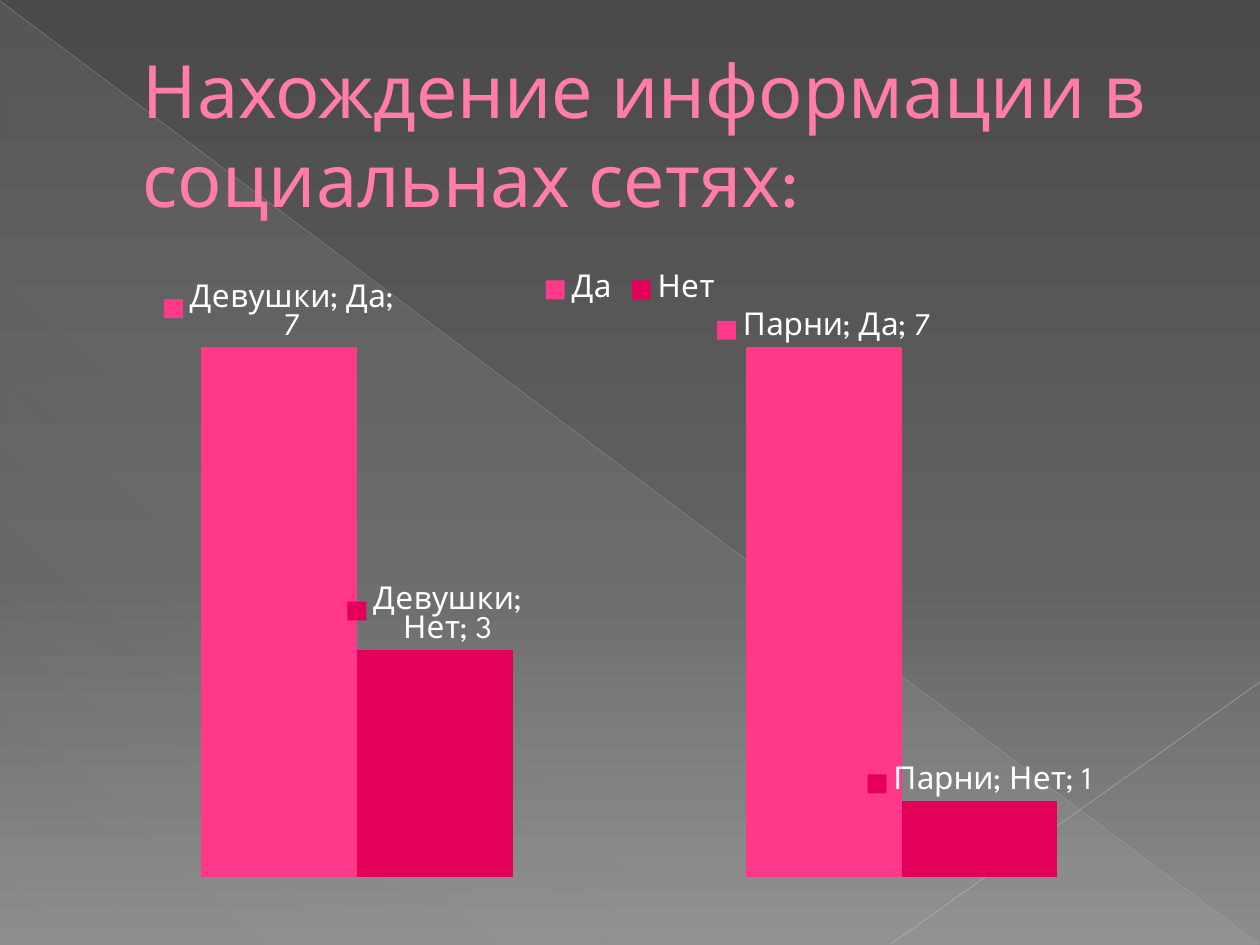
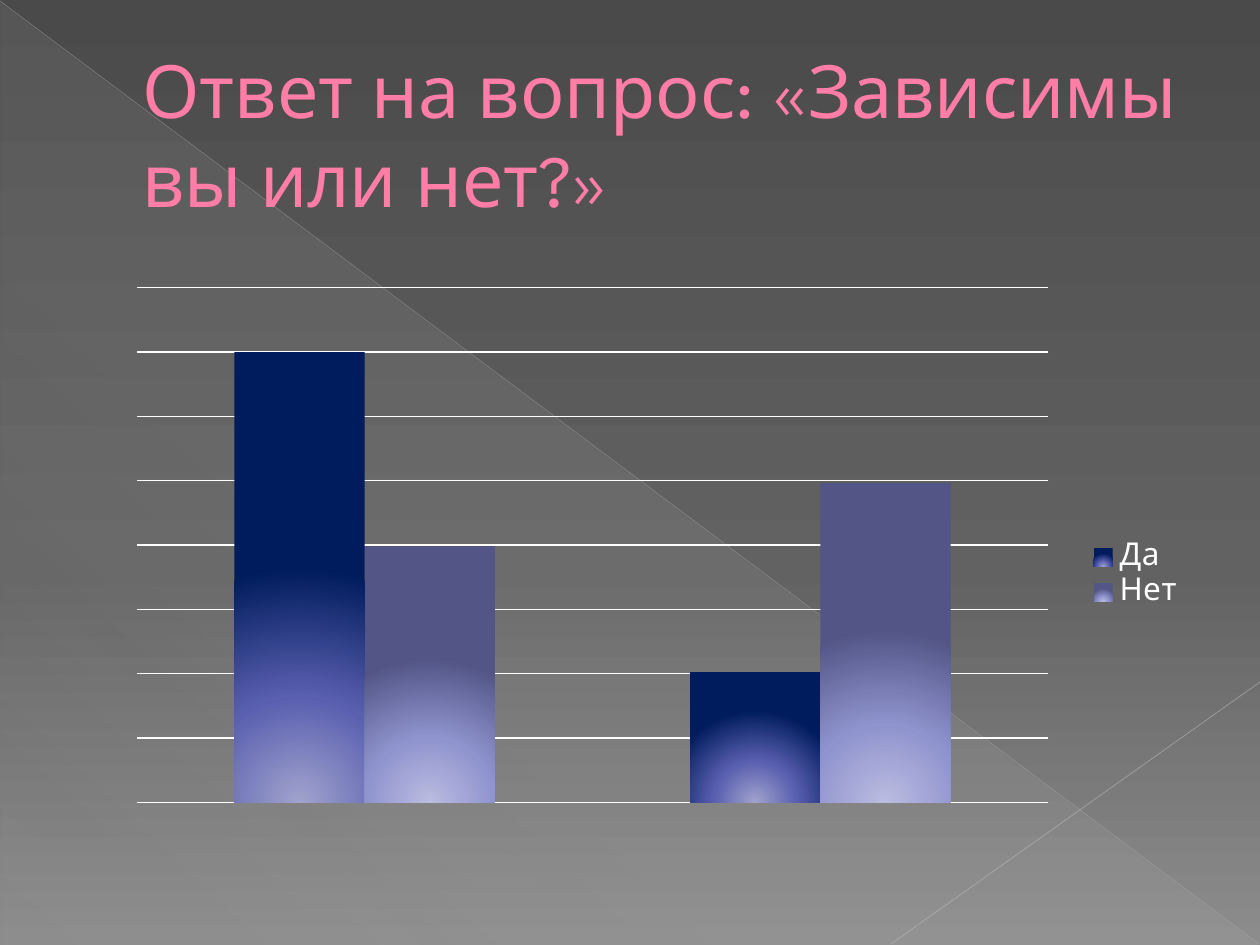
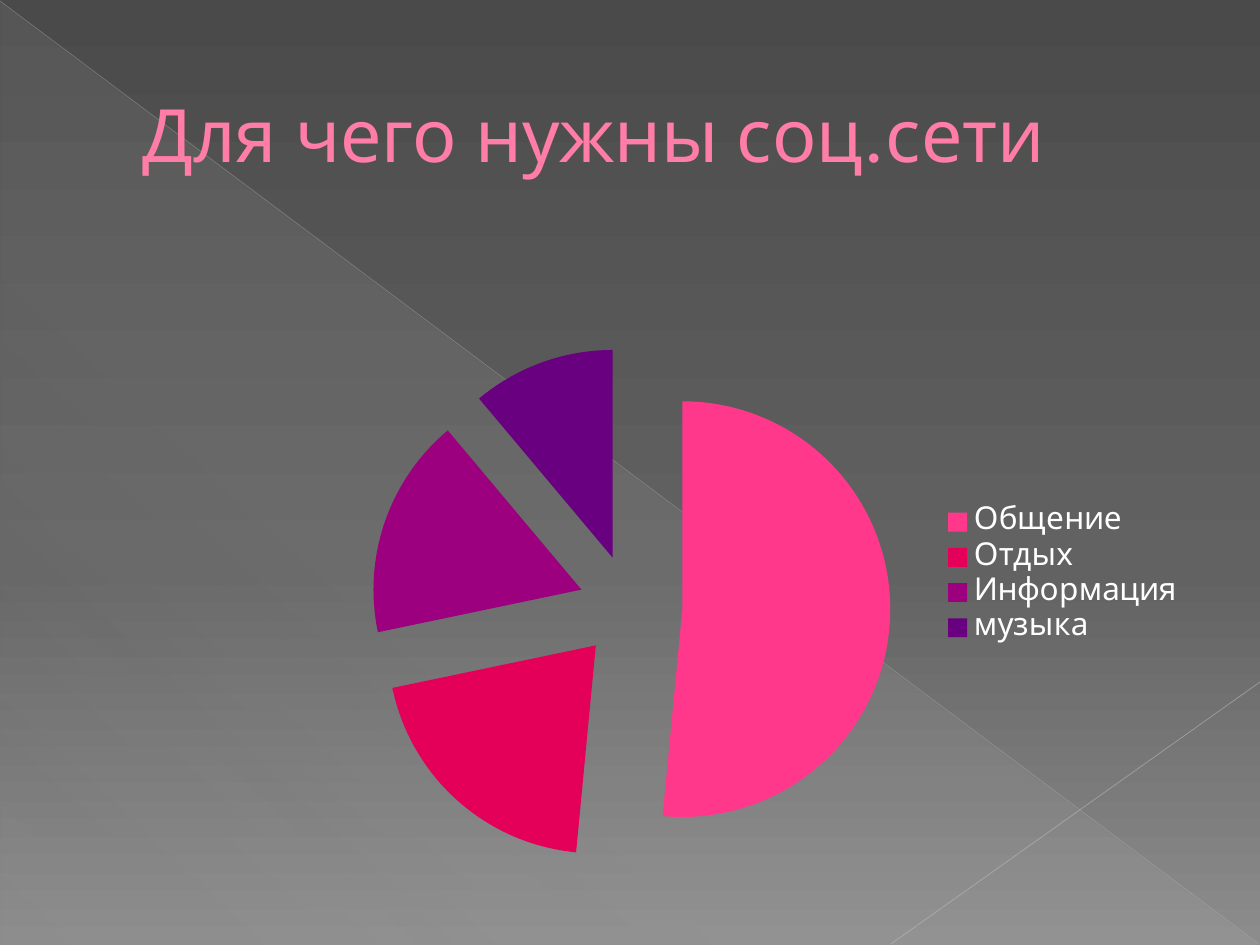
from lxml import etree
from pptx import Presentation
from pptx import util as u
from pptx.chart.data import CategoryChartData
from pptx.dml.color import RGBColor
from pptx.enum import chart as c, shapes, text
from pptx.oxml import parse_xml
from pptx.oxml.ns import nsdecls, qn

PX = 914400 / 126
FONT = "League Spartan"
WHITE, TITLE, TITLE_EDGE = "FFFFFF", "FF7DA7", "B12761"
PINK, RED, PURPLE, VIOLET = "FF388C", "E40059", "9C007F", "68007F"
BACKDROP = [(0, "4A4A4A", 100), (60, "626262", 100), (100, "8C8C8C", 100)]
VEIL = [(0, "D2D2D2", 10), (70, "D2D2D2", 8), (100, "D2D2D2", 1)]
BLUE_GLOW = [(0, "A0A3CC", 100), (45, "5A5FB0", 100), (100, "001C5C", 100)]
LILAC_GLOW = [(0, "BABCE0", 100), (45, "9094CE", 100), (100, "525586", 100)]
TITLE_BOX = (63, 37, 1134, 193)
CHART_BOX = (63, 260, 1134, 630)


def px(*lengths):
    return [u.Emu(round(length * PX)) for length in lengths]


def color(value):
    return RGBColor.from_string(value)


def apply(target, values):
    for name, value in values.items():
        setattr(target, name, value)


def gradient(fill, owner, stops, angle=None):
    """Fill with a linear gradient, or a glow from the bottom centre."""
    fill.solid()
    marks = "".join(
        f'<a:gs pos="{place * 1000}"><a:srgbClr val="{tone}">'
        f'<a:alpha val="{opacity * 1000}"/></a:srgbClr></a:gs>'
        for place, tone, opacity in stops)
    if angle is None:
        course = '<a:path path="circle"><a:fillToRect l="50000" t="100000" r="50000"/></a:path>'
    else:
        course = f'<a:lin ang="{angle * 60000}" scaled="0"/>'
    solid = owner.find(qn("a:solidFill"))
    owner.replace(solid, parse_xml(
        f'<a:gradFill {nsdecls("a")} rotWithShape="1"><a:gsLst>{marks}</a:gsLst>{course}</a:gradFill>'))


def add_line(page, ends, tone, width, opacity):
    line = page.shapes.add_connector(shapes.MSO_CONNECTOR.STRAIGHT, *px(*ends))
    line.line.width = u.Pt(width)
    line.line.color.rgb = color(tone)
    properties = line.element.spPr
    shade = properties.find(".//" + qn("a:srgbClr"))
    etree.SubElement(shade, qn("a:alpha")).set("val", str(opacity * 1000))
    etree.SubElement(properties, qn("a:effectLst"))
    return line


def decorate_master(master, page):
    """Draw the shared backdrop and move its parts behind the master's text."""
    fill = master.background.fill
    gradient(fill, master.element.find(".//" + qn("p:bgPr")), BACKDROP, 90)
    veil = page.shapes.add_shape(shapes.MSO_SHAPE.RIGHT_TRIANGLE, *px(1, 2, 1258, 943))
    veil.shadow.inherit = False
    gradient(veil.fill, veil.element.spPr, VEIL, 133)
    veil.line.fill.background()
    parts = [veil,
             add_line(page, (0, 1, 1259, 944), "BFBFBF", 0.39, 35),
             add_line(page, (1260, 682, 891, 944), "C6C6C6", 0.47, 45)]
    for index, part in enumerate(parts):
        part.element.find(".//" + qn("p:cNvPr")).set("id", str(20 + index))
        master.shapes.element.insert(2 + index, part.element)


def set_title(page, words):
    box = page.shapes.title
    apply(box, dict(zip(("left", "top", "width", "height"), px(*TITLE_BOX))))
    apply(box.text_frame, {"word_wrap": True, "auto_size": text.MSO_AUTO_SIZE.NONE,
                           "vertical_anchor": text.MSO_ANCHOR.MIDDLE})
    para = box.text_frame.paragraphs[0]
    para.alignment = text.PP_ALIGN.LEFT
    apply_indent = para._p.get_or_add_pPr()
    apply_indent.set("marL", str(px(67)[0]))
    apply_indent.set("indent", "0")
    span = para.add_run()
    span.text = words
    apply(span.font, {"size": u.Pt(42), "name": FONT, "bold": False})
    span.font.color.rgb = color(TITLE)
    span._r.get_or_add_rPr().insert(0, parse_xml(
        f'<a:ln {nsdecls("a")} w="6350"><a:solidFill><a:srgbClr val="{TITLE_EDGE}"/>'
        '</a:solidFill></a:ln>'))


def place_plot(chart, box):
    """Fix the inner plot area, given in px on the slide."""
    left, top, width, height = CHART_BOX
    shares = {"x": (box[0] - left) / width, "y": (box[1] - top) / height,
              "w": box[2] / width, "h": box[3] / height}
    modes = "".join(f'<c:{key}Mode val="edge"/>' for key in "xy")
    sizes = "".join(f'<c:{key} val="{share:.3f}"/>' for key, share in shares.items())
    area = chart._chartSpace.find(".//" + qn("c:plotArea"))
    for layout in area.findall(qn("c:layout")):
        area.remove(layout)
    area.insert(0, parse_xml(
        f'<c:layout {nsdecls("c")}><c:manualLayout><c:layoutTarget val="inner"/>'
        f'{modes}{sizes}</c:manualLayout></c:layout>'))


def add_chart(page, kind, categories, series, legend, plot_box):
    data = CategoryChartData()
    data.categories = categories
    for name, values in series.items():
        data.add_series(name, values)
    chart = page.shapes.add_chart(kind, *px(*CHART_BOX), data).chart
    apply(chart, {"has_title": False, "has_legend": True})
    apply(chart.font, {"size": u.Pt(18), "name": FONT})
    chart.font.color.rgb = color(WHITE)
    apply(chart.legend, {"position": legend, "include_in_layout": True})
    place_plot(chart, plot_box)
    return chart


def add_columns(page, categories, series, legend, plot_box, top, step):
    chart = add_chart(page, c.XL_CHART_TYPE.COLUMN_CLUSTERED,
                      categories, series, legend, plot_box)
    apply(chart.plots[0], {"gap_width": 150, "overlap": 0, "vary_by_categories": False})
    apply(chart.category_axis, {"visible": False})
    apply(chart.value_axis, {"visible": False, "has_major_gridlines": False,
                             "minimum_scale": 0, "maximum_scale": top, "major_unit": step})
    return chart


def label_columns(series):
    labels = series.data_labels
    apply(labels, {"show_value": True, "show_percentage": True, "show_category_name": True,
                   "show_series_name": True, "show_legend_key": True,
                   "position": c.XL_LABEL_POSITION.OUTSIDE_END})
    separator = parse_xml(f'<c:separator {nsdecls("c")}>; </c:separator>')
    labels._element.find(qn("c:showBubbleSize")).addnext(separator)


def paint(part, tone):
    part.format.fill.solid()
    part.format.fill.fore_color.rgb = color(tone)


def information_chart(page):
    chart = add_columns(page, ["Девушки", "Парни"], {"Да": (7, 7), "Нет": (3, 1)},
                        c.XL_LEGEND_POSITION.TOP, (85, 272, 1090, 605), 8, 1)
    for series, tone in zip(chart.series, (PINK, RED)):
        paint(series, tone)
        label_columns(series)


def dependence_chart(page):
    chart = add_columns(page, ["1", "2"], {"Да": (100, 29), "Нет": (57, 71)},
                        c.XL_LEGEND_POSITION.RIGHT, (137, 288, 912, 515), 114.4, 14.3)
    chart.value_axis.has_major_gridlines = True
    grid = chart.value_axis.major_gridlines.format.line
    grid.width = u.Pt(0.75)
    grid.color.rgb = color(WHITE)
    for series, stops in zip(chart.series, (BLUE_GLOW, LILAC_GLOW)):
        fill = series.format.fill
        gradient(fill, series._element.find(qn("c:spPr")), stops)


def purpose_chart(page):
    chart = add_chart(page, c.XL_CHART_TYPE.PIE, ["Общение", "Отдых", "Информация", "музыка"],
                      {" ": (51, 20, 17, 11)}, c.XL_LEGEND_POSITION.RIGHT, (370, 347, 520, 520))
    series = chart.series[0]
    for index, tone in enumerate((PINK, RED, PURPLE, VIOLET)):
        paint(series.points[index], tone)
    # Pull all slices apart
    explosion = parse_xml(f'<c:explosion {nsdecls("c")} val="25"/>')
    series._element.find(qn("c:dPt")).addprevious(explosion)
    for point in series._element.findall(qn("c:dPt")):
        point.find(qn("c:spPr")).addprevious(
            parse_xml(f'<c:explosion {nsdecls("c")} val="25"/>'))


def main():
    deck = Presentation()
    deck.slide_width, deck.slide_height = px(1260, 945)
    slides = [("Нахождение информации в социальнах сетях:", information_chart),
              ("Ответ на вопрос: «Зависимы вы или нет?»", dependence_chart),
              ("Для чего нужны соц.сети", purpose_chart)]
    for number, (words, draw_chart) in enumerate(slides):
        page = deck.slides.add_slide(deck.slide_layouts[5])
        if number == 0:
            decorate_master(deck.slide_master, page)
        set_title(page, words)
        draw_chart(page)
    deck.save("out.pptx")


if __name__ == "__main__":
    main()
